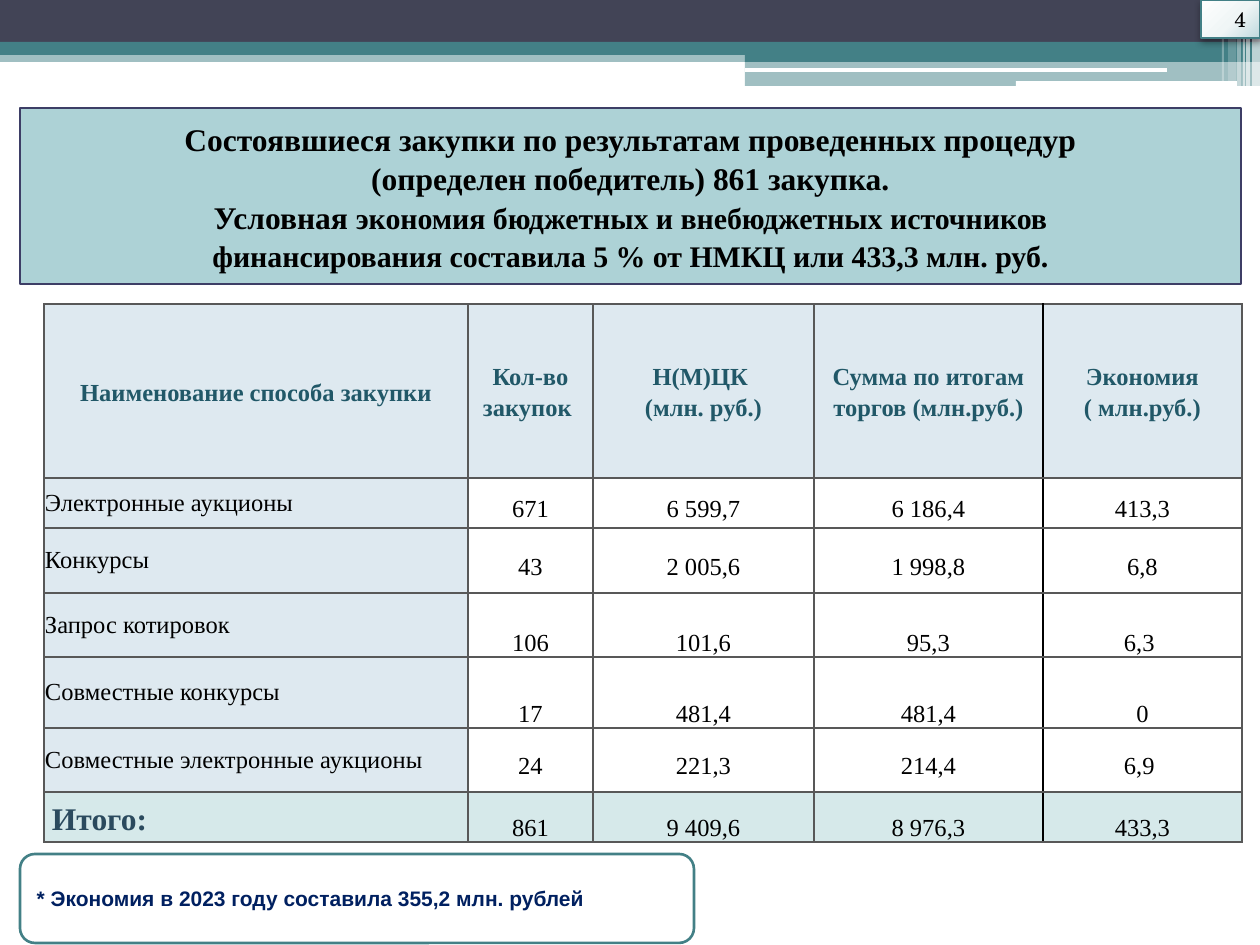
from lxml.etree import SubElement
from pptx import Presentation
from pptx.dml.color import RGBColor
from pptx.enum.shapes import MSO_SHAPE as Shape
from pptx.enum.text import MSO_ANCHOR as Anchor, MSO_AUTO_SIZE as AutoSize, PP_ALIGN as Align
from pptx.oxml import parse_xml
from pptx.oxml.ns import nsdecls, qn
from pptx.util import Emu, Pt

COLORS = {
    "dark": "424456", "teal": "438086", "white": "FFFFFF", "black": "000000",
    "title_fill": "ADD2D6", "title_line": "3D3E66", "grid": "585858",
    "label_fill": "DEE9F0", "total_fill": "D6E9EA", "head_text": "215868",
    "total_text": "2B4A5E", "note_text": "002060",
    "glow": "FEFEFE", "mist": "F0F6F6", "haze": "BFD9DD",
}
SERIF = "Times New Roman"
EMU_PER_PX = 914400 / 126

HEADER_BARS = [
    (0, 50, 1260, 12, "teal", 50),
    (0, 0, 1260, 42, "dark", 100),
    (0, 42, 1260, 13, "teal", 100),
    (745, 49, 515, 13, "teal", 100),
    (745, 61, 515, 25, "teal", 50),
    (745, 68, 422, 4, "white", 100),
    (1016, 81, 221, 5, "white", 100),
    (1252, 0, 8, 86, "white", 65),
    (1246, 0, 4, 86, "white", 65),
    (1243, 0, 2, 86, "white", 60),
    (1237, 0, 4, 86, "white", 40),
    (1228, 0, 8, 81, "white", 20),
    (1222, 0, 2, 81, "white", 30),
]
COLUMN_WIDTHS = [424, 125, 221, 229, 199]
ROW_HEIGHTS = [174, 50, 65, 64, 71, 64, 50]
PURCHASES = [
    ["Наименование способа закупки", "Кол-во закупок ", "Н(М)ЦК \n(млн. руб.)",
     "Сумма по итогам торгов (млн.руб.)", "Экономия\n( млн.руб.)"],
    ["Электронные аукционы", "671", "6 599,7", "6 186,4", "413,3"],
    ["Конкурсы", "43", "2 005,6", "1 998,8", "6,8"],
    ["Запрос котировок", "106", "101,6", "95,3", "6,3 "],
    ["Совместные конкурсы", "17", "481,4", "481,4", "0"],
    ["Совместные электронные аукционы", "24", "221,3", "214,4", "6,9 "],
    ["Итого:", "861", "9 409,6", "8 976,3", "433,3"],
]
BOTTOM_ROWS = (3, 4, 6)
TOTAL_ROW = len(PURCHASES) - 1
SAVINGS_COLUMN = 4


def px(length):
    return Emu(round(length * EMU_PER_PX))


def rgb(name):
    return RGBColor.from_string(COLORS[name])


def write(paragraph, text, size=14, font=SERIF, color="black", bold=False,
          align=Align.LEFT, spacing=1.0):
    paragraph.alignment = align
    paragraph.line_spacing = spacing
    for index, line in enumerate(text.split("\n")):
        if index:
            paragraph.add_line_break()
        if line:
            run = paragraph.add_run()
            run.text = line
            run.font.size = Pt(size)
            run.font.name = font
            run.font.bold = bold
            run.font.color.rgb = rgb(color)


class SlideBuilder:
    """Draws styled elements on the current slide, with lengths in px."""

    def __init__(self, deck):
        self.slide = deck.slides.add_slide(deck.slide_layouts[5])

    def paint(self, shape, fill, line=None, weight=1.5):
        shape.fill.solid()
        shape.fill.fore_color.rgb = rgb(fill)
        if line:
            shape.line.color.rgb = rgb(line)
            shape.line.width = Pt(weight)
        else:
            shape.line.fill.background()

    def box(self, left, top, width, height, fill, alpha=100, line=None,
            weight=1.5, kind=Shape.RECTANGLE):
        shape = self.slide.shapes.add_shape(kind, px(left), px(top), px(width), px(height))
        shape.shadow.inherit = False
        self.paint(shape, fill, line, weight)
        if alpha < 100:
            tint = shape.element.xpath("./p:spPr/a:solidFill/a:srgbClr")[0]
            SubElement(tint, qn("a:alpha"), val=str(alpha * 1000))
        return shape

    def title(self, left, top, width, height, runs):
        heading = self.slide.shapes.title
        heading.left, heading.top = px(left), px(top)
        heading.width, heading.height = px(width), px(height)
        self.paint(heading, "title_fill", "title_line")
        frame = heading.text_frame
        frame.word_wrap = True
        frame.auto_size = AutoSize.NONE
        frame.vertical_anchor = Anchor.MIDDLE
        for text, size in runs:
            write(frame.paragraphs[0], text, size=size, bold=True,
                  align=Align.CENTER, spacing=1.04)

    def page_number(self, left, top, width, height, number):
        badge = self.box(left, top, width, height, "white", line="teal", weight=0.75)
        properties = badge.element.spPr
        stops = "".join(
            f'<a:gs pos="{place * 1000}"><a:srgbClr val="{COLORS[name]}"/></a:gs>'
            for place, name in ((0, "glow"), (55, "mist"), (100, "haze")))
        gradient = parse_xml(
            f'<a:gradFill {nsdecls("a")}><a:gsLst>{stops}</a:gsLst><a:path path="circle">'
            '<a:fillToRect l="-40000" t="-90000" r="140000" b="190000"/></a:path></a:gradFill>')
        properties.replace(properties.find(qn("a:solidFill")), gradient)
        shadow = SubElement(properties.find(qn("a:effectLst")), qn("a:outerShdw"),
                            blurRad=str(Pt(4.1)), dist=str(Pt(2)), dir="5400000")
        shade = SubElement(shadow, qn("a:srgbClr"), val=COLORS["black"])
        SubElement(shade, qn("a:alpha"), val="40000")
        frame = badge.text_frame
        frame.margin_right = px(14)
        frame.vertical_anchor = Anchor.MIDDLE
        write(frame.paragraphs[0], number, size=12, font="TeX Gyre Schola", align=Align.RIGHT)

    def note(self, left, top, width, height, text):
        frame = self.box(left, top, width, height, "white", line="teal",
                         kind=Shape.ROUNDED_RECTANGLE).text_frame
        frame.word_wrap = True
        frame.vertical_anchor = Anchor.MIDDLE
        write(frame.paragraphs[0], text, size=12, font="Arial", color="note_text", bold=True)

    def cell(self, cell, text, fill=None, inset=1, anchor=Anchor.MIDDLE,
             black_sides=(), **text_format):
        properties = cell._tc.get_or_add_tcPr()
        for side in ("lnL", "lnR", "lnT", "lnB"):
            border = SubElement(properties, qn(f"a:{side}"), w=str(Pt(1)))
            ink = SubElement(border, qn("a:solidFill"))
            shade = COLORS["black" if side in black_sides else "grid"]
            SubElement(ink, qn("a:srgbClr"), val=shade)
        if fill:
            cell.fill.solid()
            cell.fill.fore_color.rgb = rgb(fill)
        else:
            cell.fill.background()
        cell.margin_left = cell.margin_right = px(inset)
        cell.margin_top = cell.margin_bottom = 0
        cell.vertical_anchor = anchor
        frame = cell.text_frame
        for index, line in enumerate(text.split("\n")):
            paragraph = frame.add_paragraph() if index else frame.paragraphs[0]
            write(paragraph, line, **text_format)

    def table(self, left, top, rows):
        table = self.slide.shapes.add_table(
            len(rows), len(COLUMN_WIDTHS), px(left), px(top),
            px(sum(COLUMN_WIDTHS)), px(sum(ROW_HEIGHTS))).table
        table.first_row = table.horz_banding = False
        for column, width in zip(table.columns, COLUMN_WIDTHS):
            column.width = px(width)
        for row, height in zip(table.rows, ROW_HEIGHTS):
            row.height = px(height)
        for r, row in enumerate(rows):
            for c, text in enumerate(row):
                if r == 0:
                    look = dict(fill="label_fill", inset=8, color="head_text", bold=True,
                                align=Align.CENTER, spacing=1.15)
                elif c:
                    look = dict(align=Align.CENTER, spacing=1.5,
                                fill="total_fill" if r == TOTAL_ROW else None,
                                anchor=Anchor.BOTTOM if r in BOTTOM_ROWS else Anchor.MIDDLE)
                elif r == TOTAL_ROW:
                    look = dict(fill="total_fill", inset=8, size=18, color="total_text",
                                bold=True, spacing=1.15)
                else:
                    look = dict(fill="label_fill")
                sides = {SAVINGS_COLUMN - 1: ("lnR",), SAVINGS_COLUMN: ("lnL",)}.get(c, ())
                self.cell(table.cell(r, c), text, black_sides=sides, **look)


def main():
    deck = Presentation()
    deck.slide_width, deck.slide_height = px(1260), px(945)
    builder = SlideBuilder(deck)
    for bar in HEADER_BARS:
        builder.box(*bar)
    builder.title(20, 108, 1221, 176, [
        ("Состоявшиеся закупки по результатам проведенных процедур\n"
         "(определен победитель) 861 закупка.\nУсловная ", 18),
        ("экономия бюджетных и внебюджетных источников\n"
         "финансирования составила 5 % от НМКЦ или 433,3 млн. руб.", 17.1),
    ])
    builder.table(44, 304, PURCHASES)
    builder.page_number(1201, 0, 59, 38, "4")
    builder.note(20, 854, 674, 89, "* Экономия в 2023 году составила 355,2 млн. рублей")
    deck.save("out.pptx")


if __name__ == "__main__":
    main()
